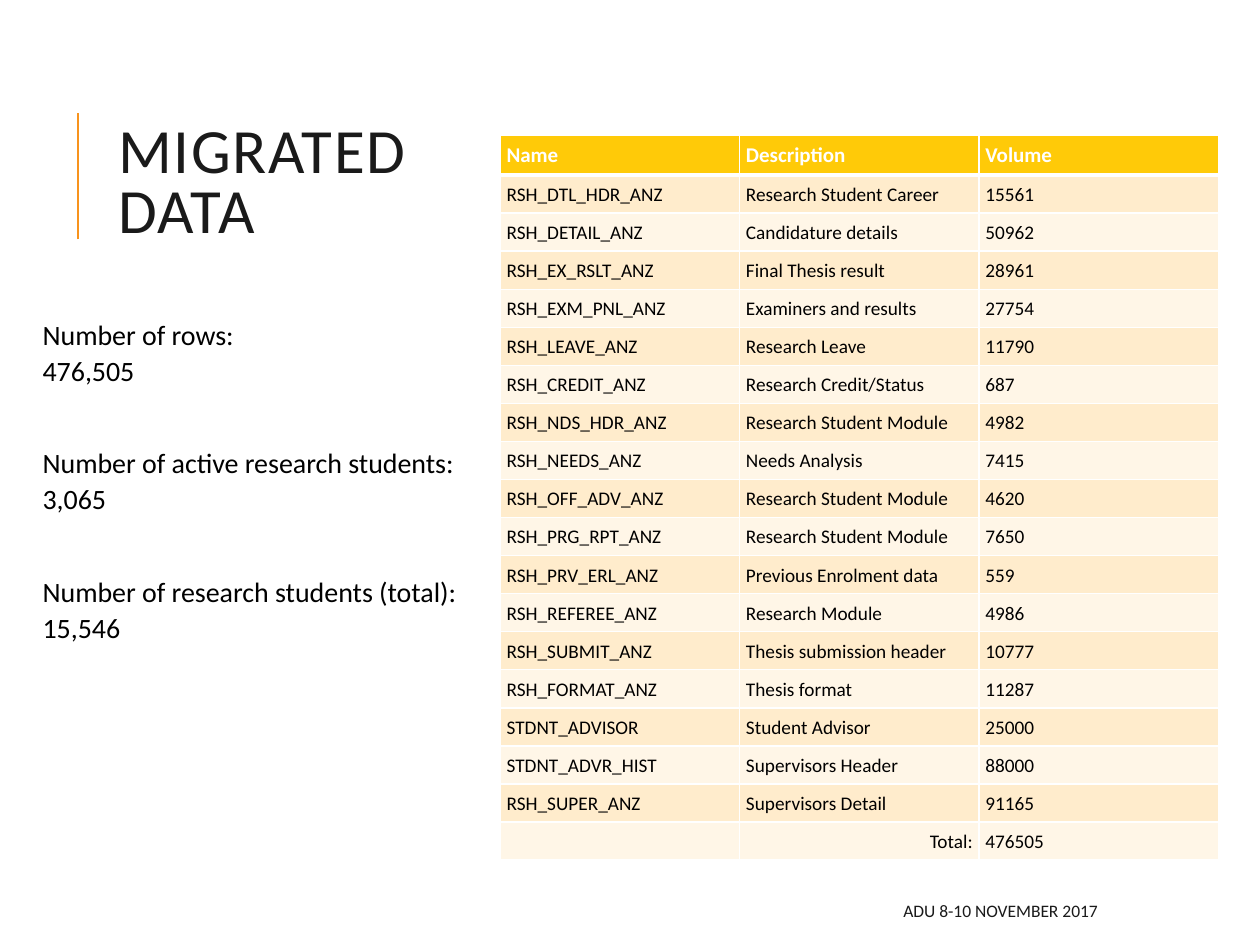
from lxml import etree
from pptx import Presentation
from pptx.dml.color import RGBColor
from pptx.enum.shapes import MSO_CONNECTOR
from pptx.enum.text import MSO_ANCHOR, PP_ALIGN
from pptx.oxml.ns import qn
from pptx.util import Inches, Pt

STRAIGHT = MSO_CONNECTOR.STRAIGHT
TOP, MIDDLE = MSO_ANCHOR.TOP, MSO_ANCHOR.MIDDLE
LEFT, RIGHT = PP_ALIGN.LEFT, PP_ALIGN.RIGHT

WHITE = RGBColor(0xFF, 0xFF, 0xFF)
BLACK = RGBColor(0x00, 0x00, 0x00)
CHARCOAL = RGBColor(0x1A, 0x1A, 0x1A)
ORANGE = RGBColor(0xF8, 0x93, 0x1D)
GOLD = RGBColor(0xFF, 0xCA, 0x08)
BANDS = [RGBColor(0xFF, 0xF6, 0xE7), RGBColor(0xFF, 0xEC, 0xCC)]

FONT = "Calibri"
HEADER_HEIGHT = 0.32
BODY_HEIGHT = 5.44
COLUMN_WIDTH = 1.9

ROWS = [
    ("Name", "Description", "Volume"),
    ("RSH_DTL_HDR_ANZ", "Research Student Career", "15561"),
    ("RSH_DETAIL_ANZ", "Candidature details", "50962"),
    ("RSH_EX_RSLT_ANZ", "Final Thesis result", "28961"),
    ("RSH_EXM_PNL_ANZ", "Examiners and results", "27754"),
    ("RSH_LEAVE_ANZ", "Research Leave", "11790"),
    ("RSH_CREDIT_ANZ", "Research Credit/Status", "687"),
    ("RSH_NDS_HDR_ANZ", "Research Student Module", "4982"),
    ("RSH_NEEDS_ANZ", "Needs Analysis", "7415"),
    ("RSH_OFF_ADV_ANZ", "Research Student Module", "4620"),
    ("RSH_PRG_RPT_ANZ", "Research Student Module", "7650"),
    ("RSH_PRV_ERL_ANZ", "Previous Enrolment data", "559"),
    ("RSH_REFEREE_ANZ", "Research Module", "4986"),
    ("RSH_SUBMIT_ANZ", "Thesis submission header", "10777"),
    ("RSH_FORMAT_ANZ", "Thesis format", "11287"),
    ("STDNT_ADVISOR", "Student Advisor", "25000"),
    ("STDNT_ADVR_HIST", "Supervisors Header", "88000"),
    ("RSH_SUPER_ANZ", "Supervisors Detail", "91165"),
    ("", "Total:", "476505"),
]


def write(para, text, size, color, bold=False, **layout):
    """Add one formatted run; layout holds paragraph attributes."""
    for name, value in layout.items():
        setattr(para, name, value)
    span = para.add_run()
    span.text = text
    span.font.color.rgb = color
    for name, value in {"name": FONT, "size": Pt(size), "bold": bold}.items():
        setattr(span.font, name, value)
    return span


def set_borders(cell, widths):
    """Draw white cell borders, widths in points by side."""
    properties = cell._tc.get_or_add_tcPr()
    for position, (side, width) in enumerate(widths.items()):
        line = etree.Element(qn(f"a:ln{side}"), w=str(Pt(width)))
        fill = etree.SubElement(line, qn("a:solidFill"))
        etree.SubElement(fill, qn("a:srgbClr"), val=str(WHITE))
        properties.insert(position, line)


deck = Presentation()
deck.slide_width, deck.slide_height = Inches(10), Inches(7.5)
page = deck.slides.add_slide(deck.slide_layouts[6])

# Accent line beside the title
accent = page.shapes.add_connector(
    STRAIGHT, Inches(0.62), Inches(1.9), Inches(0.62), Inches(0.9))
accent.line.color.rgb = ORANGE
accent.line.width = Pt(1.5)
etree.SubElement(accent._element.spPr, qn("a:effectLst"))

# Title, key figures and footer
frames = []
for bounds, anchor in [
    ((0.84, 0.52, 3.6, 1.9), MIDDLE),
    ((0.24, 2.45, 3.6, 4.11), TOP),
    ((3.97, 7.08, 4.84, 0.3), MIDDLE),
]:
    frame = page.shapes.add_textbox(*map(Inches, bounds)).text_frame
    frame.word_wrap = True
    frame.vertical_anchor = anchor
    frames.append(frame)
title, figures, footer = frames

heading = write(title.paragraphs[0], "MIGRATED DATA", 36, CHARCOAL, line_spacing=0.8)
heading.font._element.set("spc", "100")

for index, (text, gap) in enumerate([
    ("Number of rows:", 0),
    ("476,505", 0),
    ("Number of active research students: 3,065", 32.5),
    ("Number of research students (total): 15,546", 32.5),
]):
    para = figures.add_paragraph() if index else figures.paragraphs[0]
    write(para, text, 16, BLACK, line_spacing=1.07, space_before=Pt(gap))

write(footer.paragraphs[0], "ADU 8-10 NOVEMBER 2017", 10, CHARCOAL, alignment=RIGHT)

# Table of migrated records
table = page.shapes.add_table(
    len(ROWS), 3, Inches(3.97), Inches(1.07),
    Inches(3 * COLUMN_WIDTH), Inches(HEADER_HEIGHT + BODY_HEIGHT)).table
for column in table.columns:
    column.width = Inches(COLUMN_WIDTH)

for row_index, values in enumerate(ROWS):
    is_header = row_index == 0
    row_height = HEADER_HEIGHT if is_header else BODY_HEIGHT / (len(ROWS) - 1)
    table.rows[row_index].height = Inches(row_height)
    size, color = (12, WHITE) if is_header else (11, BLACK)
    borders = {"L": 1, "R": 1, "T": 3 if row_index == 1 else 1, "B": 3 if is_header else 1}
    for column_index, text in enumerate(values):
        cell = table.cell(row_index, column_index)
        for side in ("left", "top", "right", "bottom"):
            setattr(cell, f"margin_{side}", Inches(0.05))
        cell.fill.solid()
        cell.fill.fore_color.rgb = GOLD if is_header else BANDS[row_index % 2]
        set_borders(cell, borders)
        para = cell.text_frame.paragraphs[0]
        if text:
            write(para, text, size, color, bold=is_header, line_spacing=1.07,
                  alignment=RIGHT if text == "Total:" else LEFT)
        else:
            etree.SubElement(para._p, qn("a:endParaRPr"), sz=str(size * 100))

deck.save("out.pptx")
